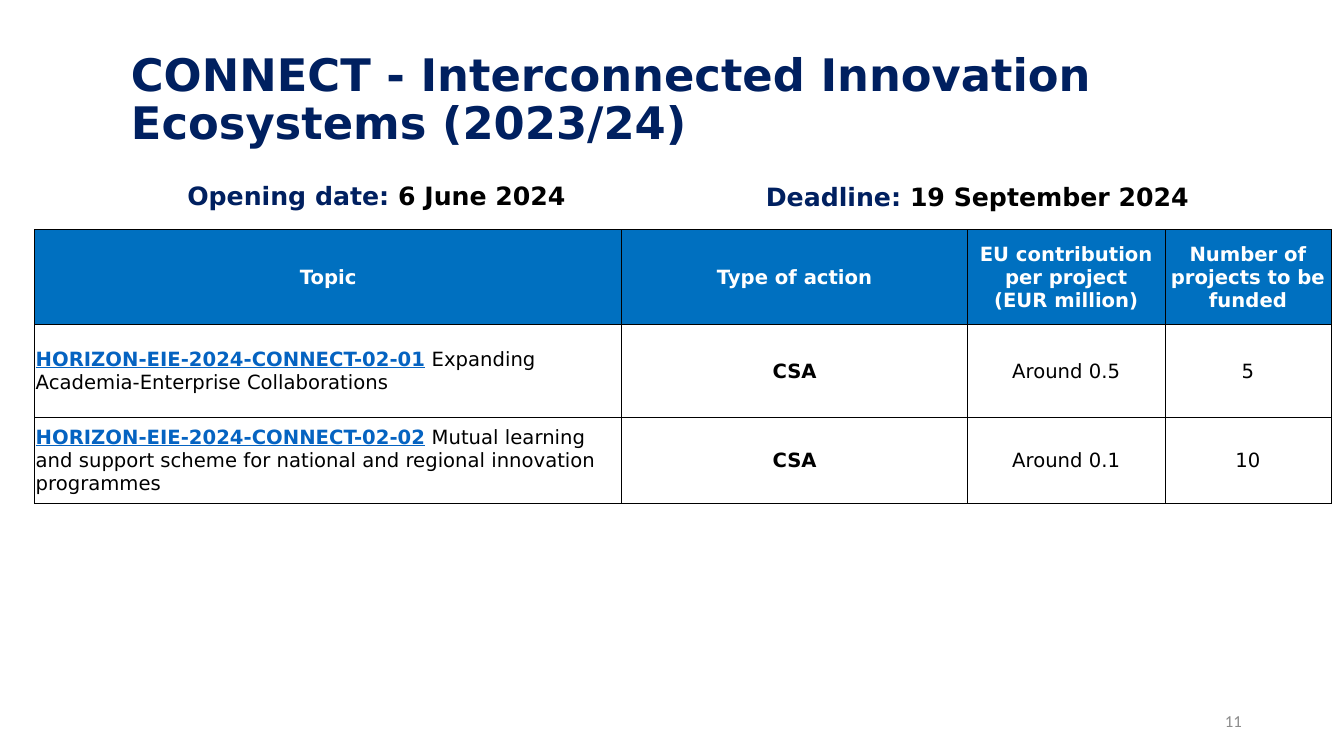
import pptx
import pptx.dml.color
import pptx.enum.text
import pptx.oxml
import pptx.oxml.ns
import pptx.util

Cm, Pt = pptx.util.Cm, pptx.util.Pt
ALIGN = pptx.enum.text.PP_ALIGN
ANCHOR = pptx.enum.text.MSO_ANCHOR

NAVY, BLUE, LINK = "002060", "0070C0", "0563C1"
BLACK, WHITE, GREY = "000000", "FFFFFF", "8C8C8C"


def rgb(value):
    return pptx.dml.color.RGBColor.from_string(value)


class SlideBuilder:
    font = {"name": "DejaVu Sans", "size": Pt(14), "bold": False}
    cell_format = {
        "vertical_anchor": ANCHOR.MIDDLE,
        "margin_left": Cm(0.03), "margin_right": Cm(0.03),
        "margin_top": Cm(0.03), "margin_bottom": 0,
    }

    def __init__(self, s):
        self.s = s

    def fill_text(self, tf, paragraphs, align=ALIGN.LEFT, spacing=None):
        """Fill a frame with paragraphs, each a list of (text, colour, format)."""
        for i, runs in enumerate(paragraphs):
            p = tf.add_paragraph() if i else tf.paragraphs[0]
            p.alignment = align
            if spacing:
                p.line_spacing = spacing
            for text, color, fmt in runs:
                r = p.add_run()
                r.text = text
                for key, value in {**self.font, **fmt}.items():
                    setattr(r.font, key, value)
                r.font.color.rgb = rgb(color)

    def text(self, box, runs, anchor=ANCHOR.TOP, **layout):
        tf = self.s.shapes.add_textbox(*map(Cm, box)).text_frame
        tf.word_wrap = True
        tf.vertical_anchor = anchor
        self.fill_text(tf, [runs], **layout)

    def border(self, cell):
        tcPr = cell._tc.get_or_add_tcPr()
        for side in "LRTB":
            tcPr.append(pptx.oxml.parse_xml(
                f'<a:ln{side} {pptx.oxml.ns.nsdecls("a")} w="{Pt(0.5)}">'
                f'<a:solidFill><a:srgbClr val="{BLACK}"/></a:solidFill></a:ln{side}>'))

    def table(self, left, top, widths, heights, rows):
        frame = self.s.shapes.add_table(
            len(heights), len(widths), Cm(left), Cm(top), Cm(sum(widths)), Cm(sum(heights)))
        table = frame.table
        table.first_row = table.horz_banding = False
        for column, width in zip(table.columns, widths):
            column.width = Cm(width)
        for row, height in zip(table.rows, heights):
            row.height = Cm(height)
        for i, row in enumerate(rows):
            for j, paragraphs in enumerate(row):
                cell = table.cell(i, j)
                for key, value in self.cell_format.items():
                    setattr(cell, key, value)
                self.border(cell)
                cell.fill.solid()
                cell.fill.fore_color.rgb = rgb(WHITE if i else BLUE)
                align = ALIGN.LEFT if i and j == 0 else ALIGN.CENTER
                self.fill_text(cell.text_frame, paragraphs, align)


def topic_row(code, title, action, contribution, projects):
    return [
        [[(code, LINK, {"bold": True, "underline": True}), (" " + title, BLACK, {})]],
        [[(action, BLACK, {"bold": True})]],
        [[(contribution, BLACK, {})]],
        [[(projects, BLACK, {})]],
    ]


def main():
    prs = pptx.Presentation()
    prs.slide_width, prs.slide_height = Cm(33.87), Cm(19.05)
    slide = SlideBuilder(prs.slides.add_slide(prs.slide_layouts[6]))

    slide.text((3.05, 0.71, 29.21, 3.68),
               [("CONNECT - Interconnected Innovation Ecosystems (2023/24)", NAVY,
                 {"size": Pt(32), "bold": True})],
               ANCHOR.MIDDLE, spacing=0.9)

    date_font = {"size": Pt(18), "bold": True}
    for box, label, date in (
        ((4.47, 4.42, 14, 1.03), "Opening date: ", "6 June 2024"),
        ((19.05, 4.45, 12.19, 1.03), "Deadline: ", "19 September 2024"),
    ):
        slide.text(box, [(label, NAVY, date_font), (date, BLACK, date_font)])

    headings = (
        ["Topic"],
        ["Type of action"],
        ["EU contribution per project", "(EUR million)"],
        ["Number of projects to be funded"],
    )
    header = [[[(line, WHITE, {"bold": True})] for line in lines] for lines in headings]
    slide.table(0.87, 5.79, (14.8, 8.71, 4.98, 4.18), (2.37, 2.36, 2.17), [
        header,
        topic_row("HORIZON-EIE-2024-CONNECT-02-01",
                  "Expanding Academia-Enterprise Collaborations",
                  "CSA", "Around 0.5", "5"),
        topic_row("HORIZON-EIE-2024-CONNECT-02-02",
                  "Mutual learning and support scheme for national and regional "
                  "innovation programmes",
                  "CSA", "Around 0.1", "10"),
    ])

    slide.text((23.93, 17.65, 7.62, 1.02),
               [("11", GREY, {"name": "Calibri", "size": Pt(12)})],
               ANCHOR.MIDDLE, align=ALIGN.RIGHT)
    prs.save("out.pptx")


if __name__ == "__main__":
    main()
